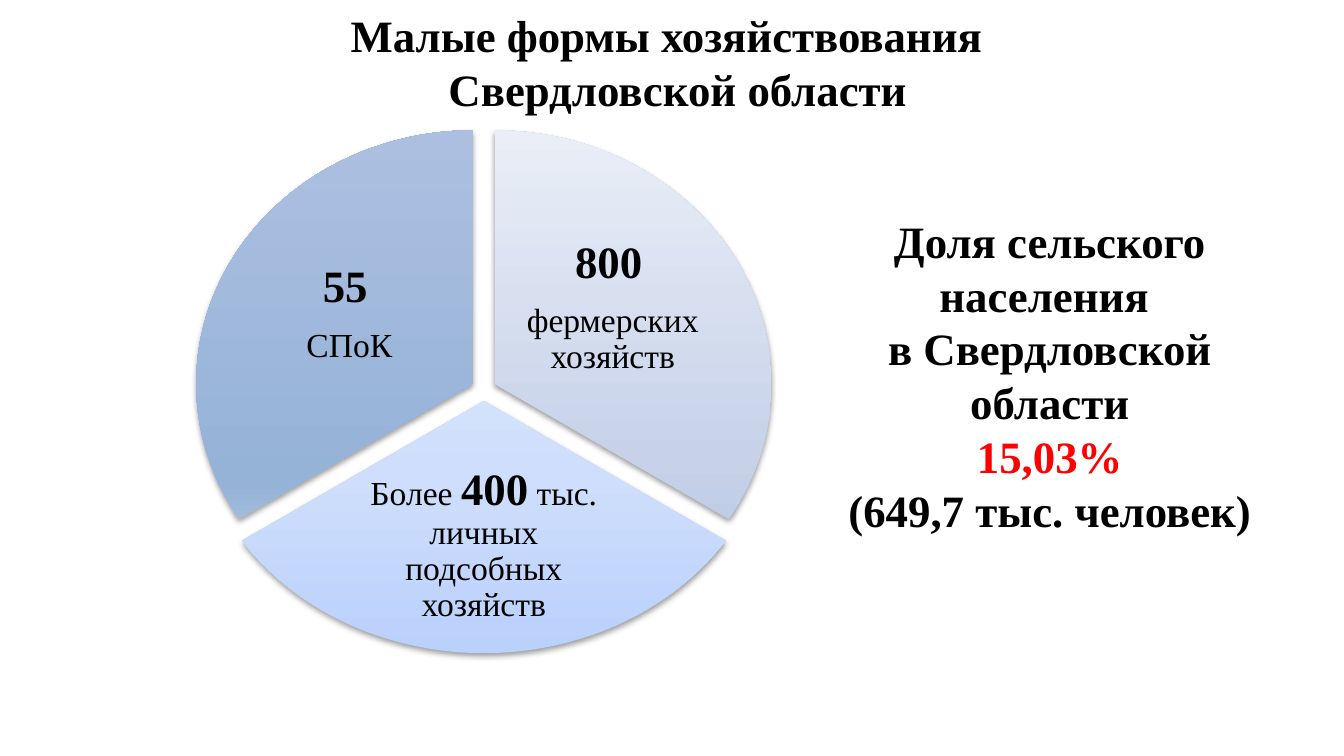
from dataclasses import dataclass

from lxml import etree
from pptx import Presentation
from pptx.dml.color import RGBColor
from pptx.enum import shapes, text
from pptx.oxml.ns import qn
from pptx.util import Inches, Pt


@dataclass(frozen=True)
class Theme:
    font: str = "Times New Roman"
    large: int = 24
    body: int = 18
    ink: str = "000000"
    accent: str = "FF0000"
    paper: str = "FFFFFF"
    farms: tuple = ((0, "AFC0E1"), (35, "C7D2E9"), (100, "E9EEF7"))
    households: tuple = ((0, "BAD1FC"), (35, "CEDEFC"), (100, "EBF2FF"))
    coops: tuple = ((0, "D2DBED"), (30, "95B3D7"), (100, "ACBFE1"))


THEME = Theme()


def run(content, size=THEME.large, bold=True, color=THEME.ink):
    return content, size, bold, color


def small(content):
    return run(content, size=THEME.body, bold=False)


def add_text(slide, box, paragraphs, inset=(0.1, 0.05), anchor="TOP",
             spacing=None, after=0, fill=None):
    """Add a centred text box; each paragraph is a list of runs."""
    s = slide.shapes.add_textbox(*map(Inches, box))
    if fill:
        s.fill.solid()
        s.fill.fore_color.rgb = RGBColor.from_string(fill)
    tf = s.text_frame
    tf.word_wrap = True
    tf.vertical_anchor = getattr(text.MSO_ANCHOR, anchor)
    tf.margin_left = tf.margin_right = Inches(inset[0])
    tf.margin_top = tf.margin_bottom = Inches(inset[1])
    for i, runs in enumerate(paragraphs):
        p = tf.add_paragraph() if i else tf.paragraphs[0]
        p.alignment = text.PP_ALIGN.CENTER
        p.line_spacing = spacing
        p.space_after = Pt(after)
        for content, size, bold, color in runs:
            r = p.add_run()
            r.text = content
            r.font.name = THEME.font
            r.font.size = Pt(size)
            r.font.bold = bold
            r.font.color.rgb = RGBColor.from_string(color)


def add_color(parent, color, alpha=None):
    clr = etree.SubElement(parent, qn("a:srgbClr"), val=color)
    if alpha is not None:
        etree.SubElement(clr, qn("a:alpha"), val=str(alpha * 1000))


def fill_gradient(s, stops):
    s.fill.gradient()
    s.fill.gradient_angle = 90
    stop_list = s.element.spPr.find(".//" + qn("a:gsLst"))
    for stop in list(stop_list):
        stop_list.remove(stop)
    for position, color in stops:
        stop = etree.SubElement(stop_list, qn("a:gs"), pos=str(position * 1000))
        add_color(stop, color)


def add_shadow(s):
    s.shadow.inherit = False
    effects = s.element.spPr.find(qn("a:effectLst"))
    shadow = etree.SubElement(
        effects, qn("a:outerShdw"), blurRad=str(Pt(3.1)), dist=str(Pt(1.6)),
        dir="5400000", rotWithShape="0")
    add_color(shadow, THEME.ink, alpha=38)


def add_wedge(slide, box, start, end, stops):
    """Add a pie wedge between two clockwise angles in degrees."""
    s = slide.shapes.add_shape(shapes.MSO_SHAPE.PIE, *map(Inches, box))
    # Preset angles count 60000ths of a degree; adjustments are scaled by 100000.
    s.adjustments[0], s.adjustments[1] = start * 0.6, end * 0.6
    fill_gradient(s, stops)
    s.line.fill.background()
    add_shadow(s)


def add_pie(slide, left, top):
    wedges = [
        ((0.18, 0, 4.12, 3.77), 270, 30, THEME.farms, (2.42, 0.69, 1.4, 1.26),
         [[run("800"), small(" ")], [small("фермерских хозяйств")]]),
        ((0, 0.14, 4.32, 3.75), 30, 150, THEME.households, (1.18, 2.51, 1.96, 1.16),
         [[small("Более "), run("400"), small(" тыс. личных подсобных хозяйств")]]),
        ((0.02, 0, 4.12, 3.77), 150, 270, THEME.coops, (0.46, 0.74, 1.4, 1.26),
         [[run("55"), small(" ")], [small("СПоК")]]),
    ]
    for wedge, start, end, stops, label, paragraphs in wedges:
        wedge_box, label_box = ((left + x, top + y, w, h)
                                for x, y, w, h in (wedge, label))
        add_wedge(slide, wedge_box, start, end, stops)
        add_text(slide, label_box, paragraphs, inset=(0.03, 0.03),
                 anchor="MIDDLE", spacing=0.9, after=8.4)


def add_title(slide, box):
    add_text(slide, box, [[run("Малые формы хозяйствования ")],
                          [run(" Свердловской области")]], fill=THEME.paper)


def add_population_share(slide, box):
    add_text(slide, box, [
        [run("Доля сельского населения ")],
        [run("в Свердловской области")],
        [run(" "), run("15,03% ", color=THEME.accent)],
        [run("(649,7 тыс. человек)")],
    ])


def main():
    prs = Presentation()
    prs.slide_width = Inches(10)
    prs.slide_height = prs.slide_width * 9 // 16
    slide = prs.slides.add_slide(prs.slide_layouts[6])
    add_title(slide, (0, 0.01, 10, 0.91))
    add_pie(slide, 1.44, 0.97)
    add_population_share(slide, (6.02, 1.54, 3.58, 2.52))
    prs.save("out.pptx")


if __name__ == "__main__":
    main()
